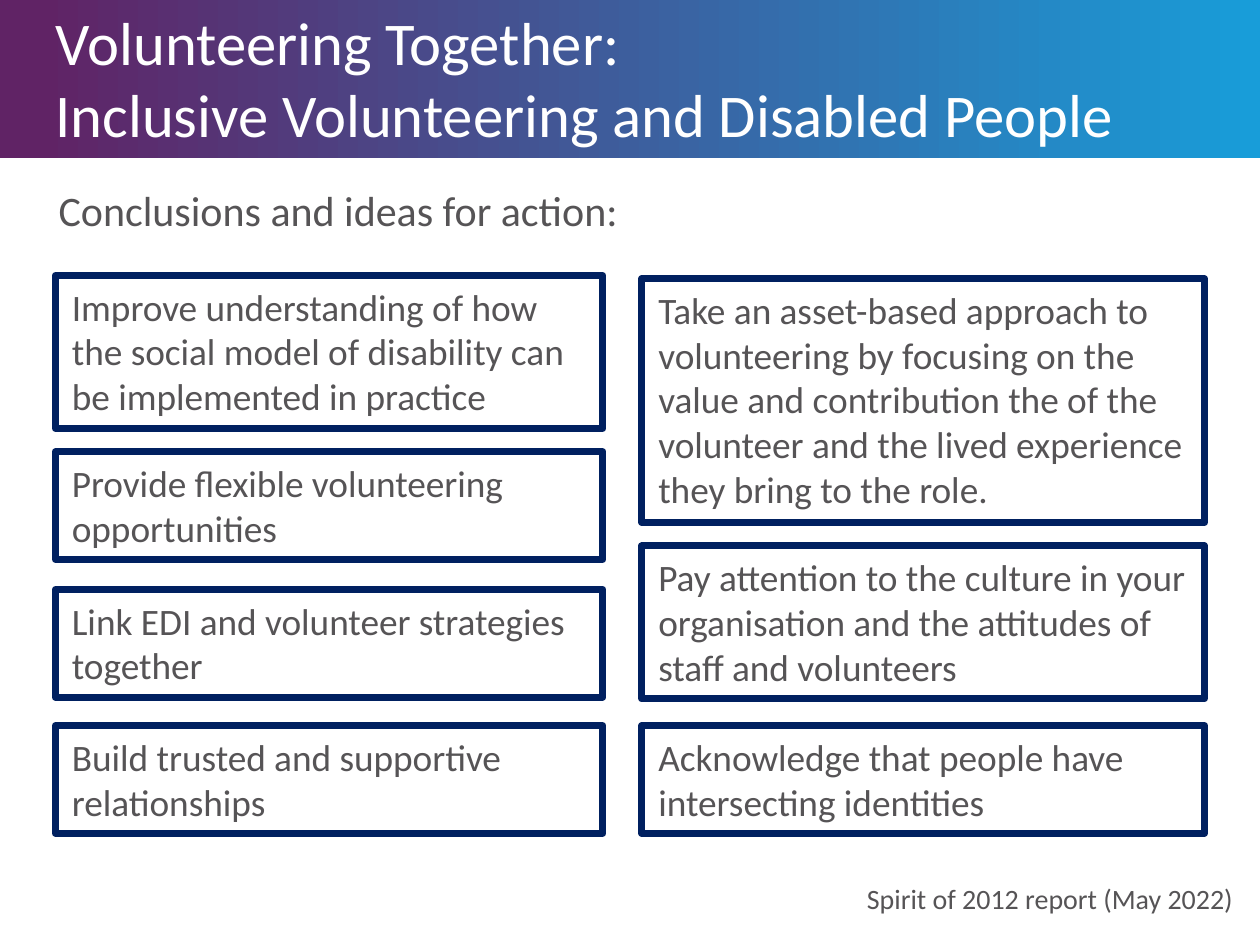
from dataclasses import dataclass

from pptx import Presentation
from pptx.dml.color import RGBColor
from pptx.enum.shapes import MSO_SHAPE
from pptx.enum.text import MSO_ANCHOR, MSO_AUTO_SIZE, PP_ALIGN
from pptx.shapes.base import BaseShape
from pptx.slide import Slide
from pptx.text.text import TextFrame
from pptx.util import Inches, Pt

WHITE = RGBColor(0xFF, 0xFF, 0xFF)
GREY = RGBColor(0x56, 0x54, 0x56)
NAVY = RGBColor(0x00, 0x20, 0x60)
PURPLE = RGBColor(0x60, 0x23, 0x65)
SKY_BLUE = RGBColor(0x18, 0x9D, 0xD9)

SLIDE_WIDTH = 7.5
SLIDE_HEIGHT = SLIDE_WIDTH * 3 / 4
LINE_HEIGHT = 0.27
BOX_PADDING = 0.1


@dataclass(frozen=True)
class Column:
    left: float
    width: float


@dataclass(frozen=True)
class Idea:
    column: Column
    top: float
    line_count: int
    text: str

    @property
    def height(self) -> float:
        return self.line_count * LINE_HEIGHT + BOX_PADDING


LEFT = Column(0.33, 3.26)
RIGHT = Column(3.82, 3.35)

IDEAS = [
    Idea(LEFT, 1.64, 3, "Improve understanding of how the social model of disability "
                        "can be implemented in practice"),
    Idea(LEFT, 2.69, 2, "Provide flexible volunteering opportunities"),
    Idea(LEFT, 3.51, 2, "Link EDI and volunteer strategies together"),
    Idea(LEFT, 4.32, 2, "Build trusted and supportive relationships"),
    Idea(RIGHT, 1.66, 5, "Take an asset-based approach to volunteering by focusing on "
                         "the value and contribution the of the volunteer and the "
                         "lived experience they bring to the role."),
    Idea(RIGHT, 3.25, 3, "Pay attention to the culture in your organisation and the "
                         "attitudes of staff and volunteers"),
    Idea(RIGHT, 4.32, 2, "Acknowledge that people have intersecting identities"),
]


def write_text(frame: TextFrame, text: str, *, size: float, color: RGBColor = GREY,
               align: PP_ALIGN = PP_ALIGN.LEFT) -> None:
    frame.word_wrap = True
    frame.text = text
    for paragraph in frame.paragraphs:
        paragraph.alignment = align
        for run in paragraph.runs:
            run.font.name = "Calibri"
            run.font.size = Pt(size)
            run.font.color.rgb = color


def add_text_box(slide: Slide, left: float, top: float, width: float, height: float,
                 text: str, *, size: float, align: PP_ALIGN = PP_ALIGN.LEFT) -> BaseShape:
    shape = slide.shapes.add_textbox(Inches(left), Inches(top), Inches(width), Inches(height))
    write_text(shape.text_frame, text, size=size, align=align)
    return shape


def add_title_band(slide: Slide) -> None:
    """Draw the gradient band behind every other shape."""
    band = slide.shapes.add_shape(MSO_SHAPE.RECTANGLE, 0, 0, Inches(SLIDE_WIDTH), Inches(0.94))
    band.shadow.inherit = False
    band.line.fill.background()
    band.fill.gradient()
    band.fill.gradient_angle = 0
    stops = zip(band.fill.gradient_stops, (0.03, 1), (PURPLE, SKY_BLUE))
    for stop, position, color in stops:
        stop.position = position
        stop.color.rgb = color
    slide.shapes._spTree.insert(2, band._element)


def format_title(slide: Slide) -> None:
    title = slide.shapes.title
    title.left, title.top = Inches(0.33), Inches(0.02)
    title.width, title.height = Inches(6.81), Inches(0.88)
    frame = title.text_frame
    frame.margin_left = frame.margin_right = frame.margin_top = frame.margin_bottom = 0
    frame.vertical_anchor = MSO_ANCHOR.MIDDLE
    frame.auto_size = MSO_AUTO_SIZE.NONE
    write_text(frame, "Volunteering Together:\vInclusive Volunteering and Disabled People",
               size=26, color=WHITE)


def add_idea(slide: Slide, idea: Idea) -> None:
    box = add_text_box(slide, idea.column.left, idea.top, idea.column.width, idea.height,
                       idea.text, size=16)
    box.line.color.rgb = NAVY
    box.line.width = Pt(3)


def main() -> None:
    presentation = Presentation()
    presentation.slide_width = Inches(SLIDE_WIDTH)
    presentation.slide_height = Inches(SLIDE_HEIGHT)
    slide = presentation.slides.add_slide(presentation.slide_layouts.get_by_name("Title Only"))
    add_title_band(slide)
    format_title(slide)
    add_text_box(slide, 0.25, 1.05, 5.08, 0.4, "Conclusions and ideas for action:", size=18)
    for idea in IDEAS:
        add_idea(slide, idea)
    add_text_box(slide, 4.9, 5.2, 2.54, 0.3, "Spirit of 2012 report (May 2022)",
                 size=12, align=PP_ALIGN.RIGHT)
    presentation.save("out.pptx")


if __name__ == "__main__":
    main()
